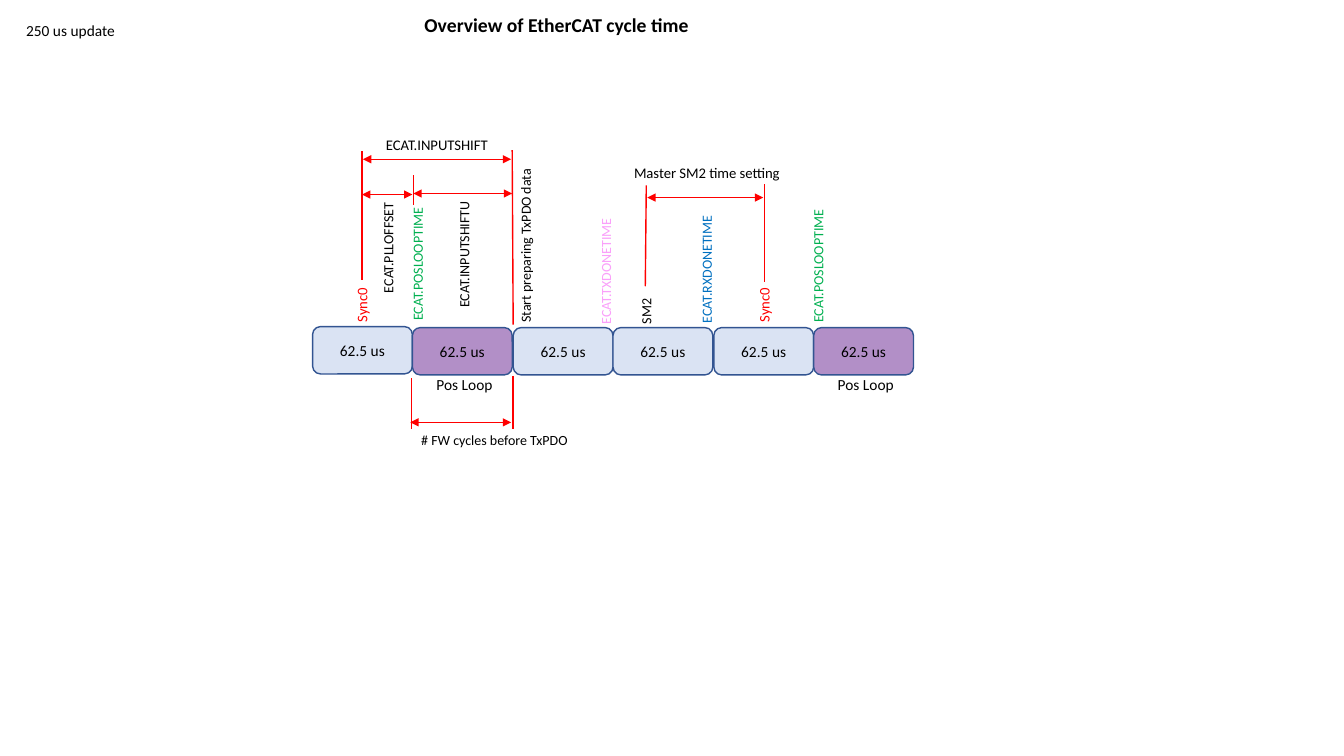
from pptx import Presentation
from pptx.dml.color import RGBColor
from pptx.enum.shapes import MSO_CONNECTOR, MSO_SHAPE
from pptx.enum.text import MSO_ANCHOR, PP_ALIGN
from pptx.oxml.ns import qn
from pptx.util import Pt
from lxml import etree

PX = 9144  # EMU; 100 px to the inch
FONT = "Calibri"
BLACK = RGBColor(0, 0, 0)
RED = RGBColor(0xFF, 0, 0)
GREEN = RGBColor(0, 0xB0, 0x50)
BLUE = RGBColor(0, 0x70, 0xC0)
PINK = RGBColor(0xFA, 0xA0, 0xFA)
PALE_BLUE = RGBColor(0xDA, 0xE3, 0xF3)
PURPLE = RGBColor(0xB2, 0x8F, 0xC7)
OUTLINE = RGBColor(0x32, 0x54, 0x91)

# Left, top, width, text, size
CAPTIONS = [
    (16, 16, 114, "250 us update", 11),
    (423, 367, 88, "Pos Loop", 11),
    (821, 367, 88, "Pos Loop", 11),
    (373, 129, 129, "ECAT.INPUTSHIFT", 10.5),
    (619, 157, 176, "Master SM2 time setting", 10.5),
    (408, 422, 214, "# FW cycles before TxPDO", 10),
]

# Centre x, bottom, length, text, size, colour
UPRIGHT_LABELS = [
    (358, 329, 57, "Sync0", 10.5, RED),
    (384, 300, 117, "ECAT.PLLOFFSET", 10, BLACK),
    (414, 328, 140, "ECAT.POSLOOPTIME", 10, GREEN),
    (460, 315, 130, "ECAT.INPUTSHIFTU", 10, BLACK),
    (521, 330, 182, "Start preparing TxPDO data", 10, BLACK),
    (600, 331, 131, "ECAT.TXDONETIME", 10, PINK),
    (640, 331, 47, "SM2", 10, BLACK),
    (700, 330, 131, "ECAT.RXDONETIME", 10, BLUE),
    (757, 329, 57, "Sync0", 10.5, RED),
    (811, 330, 140, "ECAT.POSLOOPTIME", 10, GREEN),
]

# x1, y1, x2, y2
MARKERS = [
    (359, 150, 359, 278),
    (410, 174, 410, 203),
    (508, 149, 509, 322),
    (641, 184, 640, 284),
    (758, 183, 758, 280),
    (408, 375, 408, 426),
    (509, 373, 509, 426),
]

# x1, x2, y
SPANS = [
    (360, 507, 158),
    (359, 409, 193),
    (410, 508, 192),
    (642, 757, 196),
    (407, 507, 419),
]


def place(shape, left, top, width, height):
    shape.left, shape.top = left * PX, top * PX
    shape.width, shape.height = width * PX, height * PX


def write(shape, text, size, color=BLACK, bold=False, align=PP_ALIGN.LEFT):
    tf = shape.text_frame
    tf.word_wrap = True
    tf.vertical_anchor = MSO_ANCHOR.MIDDLE
    tf.margin_top = tf.margin_bottom = 5 * PX
    p = tf.paragraphs[0]
    p.text = text
    p.alignment = align
    p.font.name = FONT
    p.font.size = Pt(size)
    p.font.bold = bold
    p.font.color.rgb = color


def add_title(s, text):
    title = s.shapes.title
    place(title, 411, 7, 465, 34)
    write(title, text, 14, bold=True)


def add_cycle(s, left, top, color):
    block = s.shapes.add_shape(MSO_SHAPE.ROUNDED_RECTANGLE,
                               left * PX, top * PX, 99 * PX, 47 * PX)
    block.shadow.inherit = False
    block.fill.solid()
    block.fill.fore_color.rgb = color
    block.line.color.rgb = OUTLINE
    block.line.width = Pt(1)
    write(block, "62.5 us", 11, align=PP_ALIGN.CENTER)


def add_caption(s, left, top, width, text, size, color=BLACK):
    box = s.shapes.add_textbox(left * PX, top * PX, width * PX, 28 * PX)
    write(box, text, size, color)
    return box


def add_upright_label(s, center, bottom, length, text, size, color):
    """Add a label that reads upwards from its bottom end."""
    left = center - length // 2
    top = bottom - length // 2 - 14
    add_caption(s, left, top, length, text, size, color).rotation = 270


def add_line(s, x1, y1, x2, y2, arrows=False):
    line = s.shapes.add_connector(MSO_CONNECTOR.STRAIGHT,
                                  x1 * PX, y1 * PX, x2 * PX, y2 * PX)
    line.line.color.rgb = RED
    line.line.width = Pt(1)
    if arrows:
        ln = line.line._get_or_add_ln()
        for end in ("a:headEnd", "a:tailEnd"):
            etree.SubElement(ln, qn(end), type="triangle")
    etree.SubElement(line._element.spPr, qn("a:effectLst"))


def main():
    prs = Presentation()
    prs.slide_width, prs.slide_height = 1333 * PX, 750 * PX
    s = prs.slides.add_slide(prs.slide_layouts[5])
    add_title(s, "Overview of EtherCAT cycle time")

    for i in range(6):
        is_pos_loop = i % 4 == 1
        add_cycle(s, 310 + round(i * 99.4), 325 if i else 324,
                  PURPLE if is_pos_loop else PALE_BLUE)
    for caption in CAPTIONS:
        add_caption(s, *caption)
    for label in UPRIGHT_LABELS:
        add_upright_label(s, *label)
    for marker in MARKERS:
        add_line(s, *marker)
    for x1, x2, y in SPANS:
        add_line(s, x1, y, x2, y, arrows=True)

    prs.save("out.pptx")


if __name__ == "__main__":
    main()
